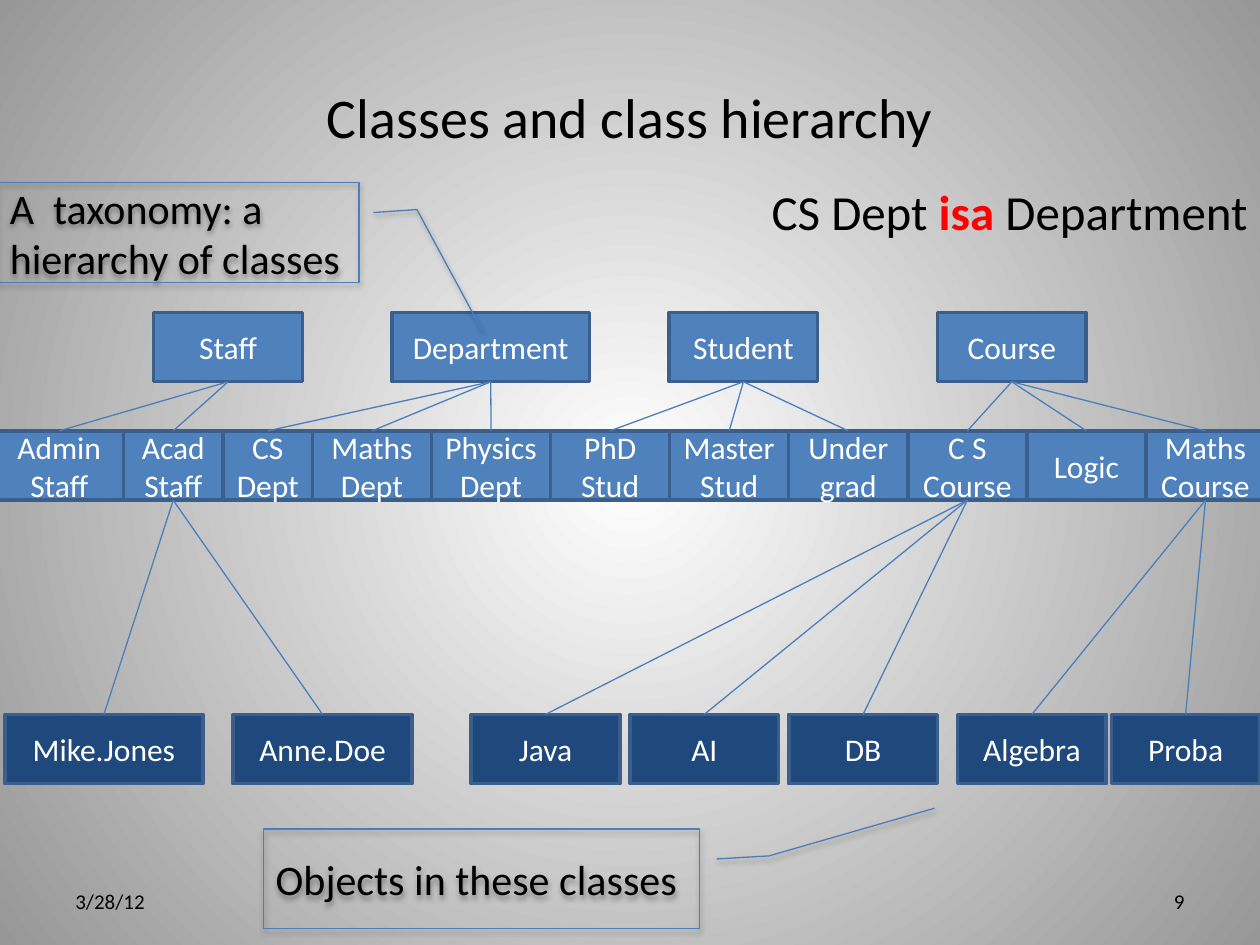
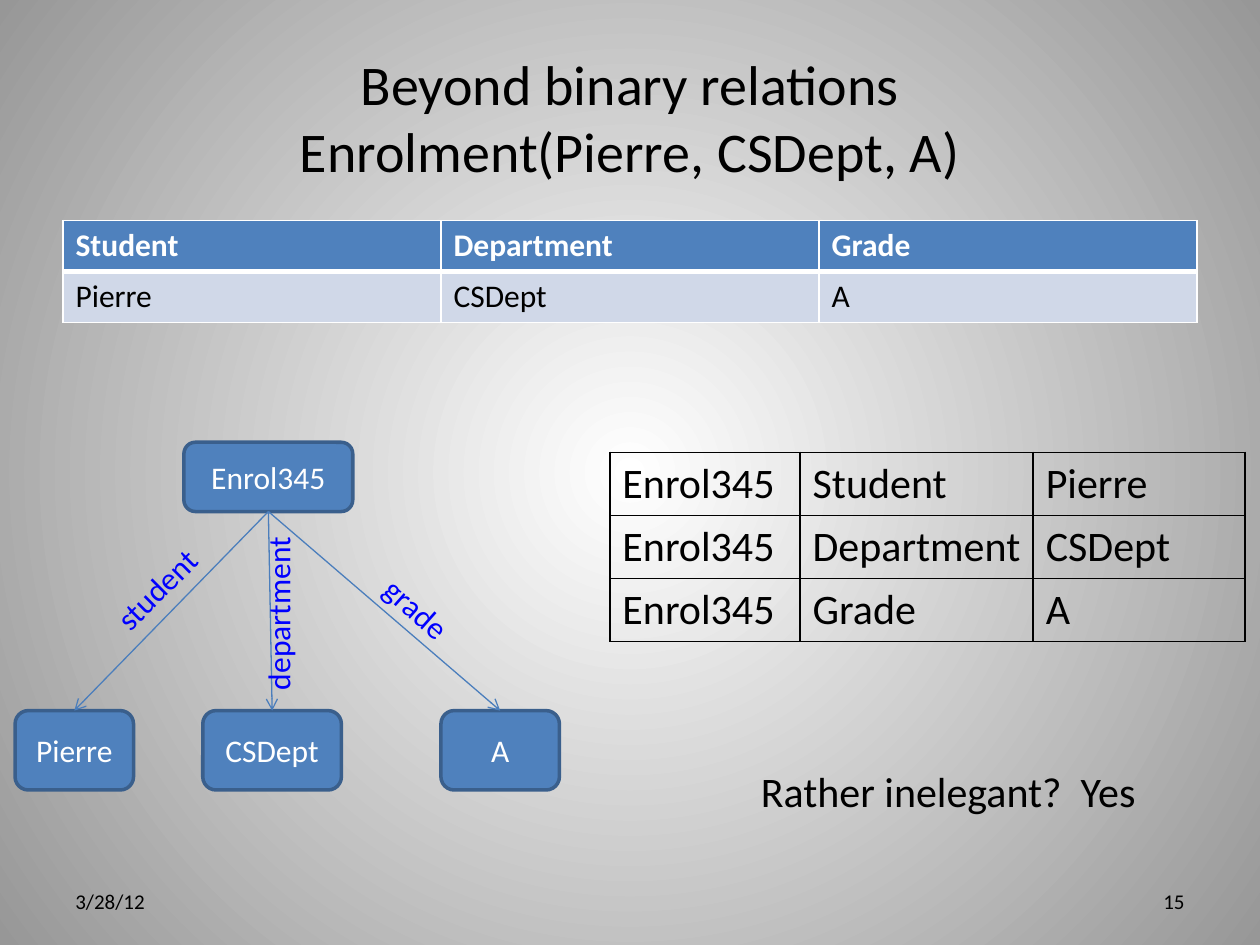
import dataclasses
import itertools
import typing

import pptx
import pptx.dml.color
import pptx.enum.shapes
import pptx.enum.text
import pptx.oxml
import pptx.oxml.ns
import pptx.util

SLIDE_WIDTH = pptx.util.Inches(10)
SLIDE_HEIGHT = pptx.util.Inches(7.5)
COLUMN = SLIDE_WIDTH // 100
ROW = SLIDE_HEIGHT // 75

COLORS = {
    "ink": "000000", "paper": "FFFFFF", "edge": "979797", "class": "4F81BD",
    "object": "1F497D", "outline": "3A5F8C", "link": "4B7EBC",
    "isa": "FF0000", "relation": "0000FF", "record": "D0D8E8",
}

# Each format: colour name, then font attributes.
FORMATS = {
    "title": ("ink", {"size": 32}),
    "statement": ("ink", {"size": 28, "bold": False}),
    "isa": ("isa", {"size": 28, "bold": True}),
    "footer": ("ink", {"size": 12}),
    "box": ("paper", {"size": 18}),
    "remark": ("ink", {"size": 24}),
    "relation": ("relation", {"size": 18}),
    "header": ("paper", {"size": 18, "bold": True}),
    "record": ("ink", {"size": 18}),
}

ALIGN = pptx.enum.text.PP_ALIGN
ANCHOR = pptx.enum.text.MSO_ANCHOR
SHAPE = pptx.enum.shapes.MSO_SHAPE
BOTTOM_SITE, TOP_SITE = 2, 0


class Area(typing.NamedTuple):
    """A place in grid columns (left, width) and rows (top, height)."""
    left: float
    top: float
    width: float
    height: float

    def emu(self) -> tuple[int, ...]:
        units = (COLUMN, ROW, COLUMN, ROW)
        return tuple(round(length * unit) for length, unit in zip(self, units))


@dataclasses.dataclass(frozen=True)
class Box:
    label: str
    left: float
    width: float
    parent: str = ""


@dataclasses.dataclass(frozen=True)
class Level:
    top: float
    height: float
    boxes: list[Box]
    color: str = "class"
    outline: typing.Any = SHAPE.RECTANGLE


@dataclasses.dataclass(frozen=True)
class Callout:
    text: str
    area: Area
    leader_end: tuple[float, float]


@dataclasses.dataclass(frozen=True)
class Relation:
    label: str
    area: Area
    angle: float


@dataclasses.dataclass(frozen=True)
class RowStyle:
    """Look of one table row; rules are left, right, top, bottom in points."""
    text: str
    rules: tuple[float, float, float, float]
    rule_color: str
    fill: str = ""


TITLE = Area(5, 3, 90, 12.5)
DATE = Area(5, 69.5, 23.3, 4)
NUMBER = Area(71.7, 69.5, 23.3, 4)

CLASSES = Level(24.8, 5.5, [
    Box("Staff", 12.2, 11.8), Box("Department", 31.1, 15.7),
    Box("Student", 53.1, 11.8), Box("Course", 74.4, 11.8),
])

SUBCLASS_START = -0.4
SUBCLASS_WIDTHS = [10.2, 7.9, 7.1] + [9.45] * 8
SUBCLASS_PARENTS = [
    ("Admin\nStaff", "Staff"), ("Acad\nStaff", "Staff"),
    ("CS\nDept", "Department"), ("Maths\nDept", "Department"),
    ("Physics\nDept", "Department"),
    ("PhD\nStud", "Student"), ("Master\nStud", "Student"),
    ("Undergrad", "Student"),
    ("C S\nCourse", "Course"), ("Logic", "Course"), ("Maths\nCourse", "Course"),
]
SUBCLASS_LEFTS = itertools.accumulate(SUBCLASS_WIDTHS, initial=SUBCLASS_START)
SUBCLASSES = Level(34.2, 5.5, [
    Box(label, left, width, parent)
    for (label, parent), left, width
    in zip(SUBCLASS_PARENTS, SUBCLASS_LEFTS, SUBCLASS_WIDTHS)
])

OBJECTS = Level(56.7, 5.5, [
    Box("Mike.Jones", 0.4, 15.7, "Acad\nStaff"),
    Box("Anne.Doe", 18.5, 14.2, "Acad\nStaff"),
    Box("Java", 37.4, 11.8, "C S\nCourse"),
    Box("AI", 50, 11.8, "C S\nCourse"),
    Box("DB", 62.6, 11.8, "C S\nCourse"),
    Box("Algebra", 76, 11.8, "Maths\nCourse"),
    Box("Proba", 88.2, 11.8, "Maths\nCourse"),
], color="object")

CALLOUTS = [
    Callout("A  taxonomy: a hierarchy of classes", Area(-0.2, 14.5, 28.7, 7.9),
            (1.48, 1.34)),
    Callout("Objects in these classes", Area(20.9, 65.8, 34.6, 7.9),
            (-0.21, 1.54)),
]

ENROLMENT = Level(35.1, 5.5, [Box("Enrol345", 14.6, 13.4)],
                  outline=SHAPE.ROUNDED_RECTANGLE)
ENROLMENT_PARTS = Level(56.4, 6.3, [
    Box("Pierre", 1.2, 9.4, "Enrol345"), Box("CSDept", 16.1, 11, "Enrol345"),
    Box("A", 35, 9.4, "Enrol345"),
], outline=SHAPE.ROUNDED_RECTANGLE)

RELATIONS = [
    Relation("student", Area(7.5, 44.7, 9.9, 4), 315.1),
    Relation("department", Area(14.9, 46.6, 14.3, 4), 270),
    Relation("grade", Area(29.2, 46.3, 7.8, 4), 41.6),
]

ATTRIBUTES = ["Student", "Department", "Grade"]
VALUES = ["Pierre", "CSDept", "A"]
TRIPLES = [["Enrol345", *pair] for pair in zip(ATTRIBUTES, VALUES)]
HEADER_ROW = RowStyle("header", (1, 1, 1, 3), "paper", "class")
RECORD_ROW = RowStyle("record", (1, 1, 3, 1), "paper", "record")
TRIPLE_ROW = RowStyle("remark", (1, 1, 1, 1), "ink")


def rgb(name: str) -> pptx.dml.color.RGBColor:
    return pptx.dml.color.RGBColor.from_string(COLORS[name])


def xml(markup: str):
    """Parse one element of the drawing namespace, given without its brackets' prefix declaration."""
    tag, rest = markup.split(" ", 1)
    return pptx.oxml.parse_xml(f"{tag} {pptx.oxml.ns.nsdecls('a')} {rest}")


def paint(shape, fill: str, line: str, width: float) -> None:
    shape.shadow.inherit = False
    if fill:
        shape.fill.solid()
        shape.fill.fore_color.rgb = rgb(fill)
    else:
        shape.fill.background()
    shape.line.color.rgb = rgb(line)
    shape.line.width = pptx.util.Pt(width)


def add_run(paragraph, text: str, style: str) -> None:
    run = paragraph.add_run()
    run.text = text
    color, attributes = FORMATS[style]
    for name, value in ({"name": "Calibri"} | attributes).items():
        setattr(run.font, name, pptx.util.Pt(value) if name == "size" else value)
    run.font.color.rgb = rgb(color)


def write(frame, text: str, style: str, align=ALIGN.LEFT) -> None:
    """Write each line of the text as a paragraph."""
    for index, line in enumerate(text.splitlines()):
        paragraph = frame.add_paragraph() if index else frame.paragraphs[0]
        paragraph.alignment = align
        add_run(paragraph, line, style)


def add_text(slide, area: Area, text: str, style: str, align=ALIGN.LEFT,
             anchor=ANCHOR.TOP, wrap: bool = True):
    label = slide.shapes.add_textbox(*area.emu())
    label.text_frame.word_wrap = wrap
    label.text_frame.vertical_anchor = anchor
    write(label.text_frame, text, style, align)
    return label


def add_level(slide, level: Level) -> dict[str, typing.Any]:
    drawn = {}
    for box in level.boxes:
        area = Area(box.left, level.top, box.width, level.height)
        shape = slide.shapes.add_shape(level.outline, *area.emu())
        paint(shape, level.color, "outline", 2)
        shape.text_frame.vertical_anchor = ANCHOR.MIDDLE
        write(shape.text_frame, box.label, "box", ALIGN.CENTER)
        drawn[box.label] = shape
    return drawn


def add_link(slide, parent, child, arrow: bool) -> None:
    link = slide.shapes.add_connector(
        pptx.enum.shapes.MSO_CONNECTOR.STRAIGHT, 0, 0, 0, 0)
    link.begin_connect(parent, BOTTOM_SITE)
    link.end_connect(child, TOP_SITE)
    link.line.color.rgb = rgb("link")
    link.line.width = pptx.util.Pt(0.75)
    if arrow:
        link.line._get_or_add_ln().append(xml('<a:tailEnd type="arrow"/>'))
    link._element.spPr.append(xml("<a:effectLst />"))


def add_hierarchy(slide, levels: list[Level], arrow: bool = False) -> None:
    drawn = {}
    for level in levels:
        drawn |= add_level(slide, level)
    for box in itertools.chain.from_iterable(level.boxes for level in levels):
        if box.parent:
            add_link(slide, drawn[box.parent], drawn[box.label], arrow)


def add_callout(slide, callout: Callout) -> None:
    shape = slide.shapes.add_shape(SHAPE.LINE_CALLOUT_2, *callout.area.emu())
    leader = (0.3, 1.04, 0.27, 1.16, *callout.leader_end)
    for index, value in enumerate(leader):
        shape.adjustments[index] = value
    paint(shape, "", "link", 0.75)
    blur, distance = pptx.util.Pt(3.1), pptx.util.Pt(1.8)
    effects = shape._element.spPr.find(pptx.oxml.ns.qn("a:effectLst"))
    effects.append(xml(
        f'<a:outerShdw blurRad="{blur}" dist="{distance}" dir="5400000" rotWithShape="0">'
        f'<a:srgbClr val="{COLORS["ink"]}"><a:alpha val="35000"/></a:srgbClr></a:outerShdw>'))
    shape.text_frame.vertical_anchor = ANCHOR.MIDDLE
    write(shape.text_frame, callout.text, "remark")


def add_grid(slide, left: float, top: float, widths: list[float], height: float,
             rows: list[list[str]], styles: list[RowStyle]) -> None:
    area = Area(left, top, sum(widths), height * len(rows))
    table = slide.shapes.add_table(len(rows), len(widths), *area.emu()).table
    table.first_row = table.horz_banding = False
    for column, width in zip(table.columns, widths):
        column.width = round(width * COLUMN)
    for row, texts, style in zip(table.rows, rows, styles):
        row.height = round(height * ROW)
        for cell, text in zip(row.cells, texts):
            write(cell.text_frame, text, style.text)
            for side, width in zip("LRTB", style.rules):
                cell._tc.get_or_add_tcPr().append(xml(
                    f'<a:ln{side} w="{pptx.util.Pt(width)}"><a:solidFill>'
                    f'<a:srgbClr val="{COLORS[style.rule_color]}"/></a:solidFill></a:ln{side}>'))
            if style.fill:
                cell.fill.solid()
                cell.fill.fore_color.rgb = rgb(style.fill)
            else:
                cell.fill.background()


def set_backdrop(master) -> None:
    """Give all slides a round gradient, light in the middle."""
    fill = master.background.fill
    fill.gradient()
    for stop, (position, color) in zip(fill.gradient_stops, [(0, "paper"), (1, "edge")]):
        stop.position = position
        stop.color.rgb = rgb(color)
    gradient = next(master.element.iter(pptx.oxml.ns.qn("a:gradFill")))
    gradient.replace(gradient.find(pptx.oxml.ns.qn("a:lin")), xml(
        '<a:path path="circle"><a:fillToRect l="50000" t="50000" r="50000" b="50000"/></a:path>'))


def add_slide(deck, title: str, number: int):
    slide = deck.slides.add_slide(deck.slide_layouts[6])
    add_text(slide, TITLE, title, "title", ALIGN.CENTER, ANCHOR.MIDDLE)
    add_text(slide, DATE, "3/28/12", "footer", anchor=ANCHOR.MIDDLE)
    add_text(slide, NUMBER, str(number), "footer", ALIGN.RIGHT, ANCHOR.MIDDLE)
    return slide


def build_class_hierarchy(deck) -> None:
    slide = add_slide(deck, "Classes and class hierarchy", 9)
    statement = add_text(slide, Area(5, 13.9, 95, 49.5), "CS Dept ", "statement", ALIGN.RIGHT)
    for text, style in [("isa ", "isa"), ("Department", "statement")]:
        add_run(statement.text_frame.paragraphs[0], text, style)
    add_hierarchy(slide, [CLASSES, SUBCLASSES, OBJECTS])
    for callout in CALLOUTS:
        add_callout(slide, callout)


def build_enrolment(deck) -> None:
    slide = add_slide(deck, "Beyond binary relations\nEnrolment(Pierre, CSDept, A)", 15)
    add_grid(slide, 5, 17.5, [30] * 3, 4.05, [ATTRIBUTES, VALUES], [HEADER_ROW, RECORD_ROW])
    add_hierarchy(slide, [ENROLMENT, ENROLMENT_PARTS], arrow=True)
    for relation in RELATIONS:
        label = add_text(slide, relation.area, relation.label, "relation", wrap=False)
        label.rotation = relation.angle
    add_grid(slide, 48.4, 35.9, [15.1, 18.5, 16.8], 5, TRIPLES, [TRIPLE_ROW] * 3)
    add_text(slide, Area(59.4, 60.3, 32.4, 5), "Rather inelegant?  Yes", "remark", wrap=False)


def main() -> None:
    deck = pptx.Presentation()
    deck.slide_width, deck.slide_height = SLIDE_WIDTH, SLIDE_HEIGHT
    set_backdrop(deck.slide_master)
    build_class_hierarchy(deck)
    build_enrolment(deck)
    deck.save("out.pptx")


if __name__ == "__main__":
    main()
